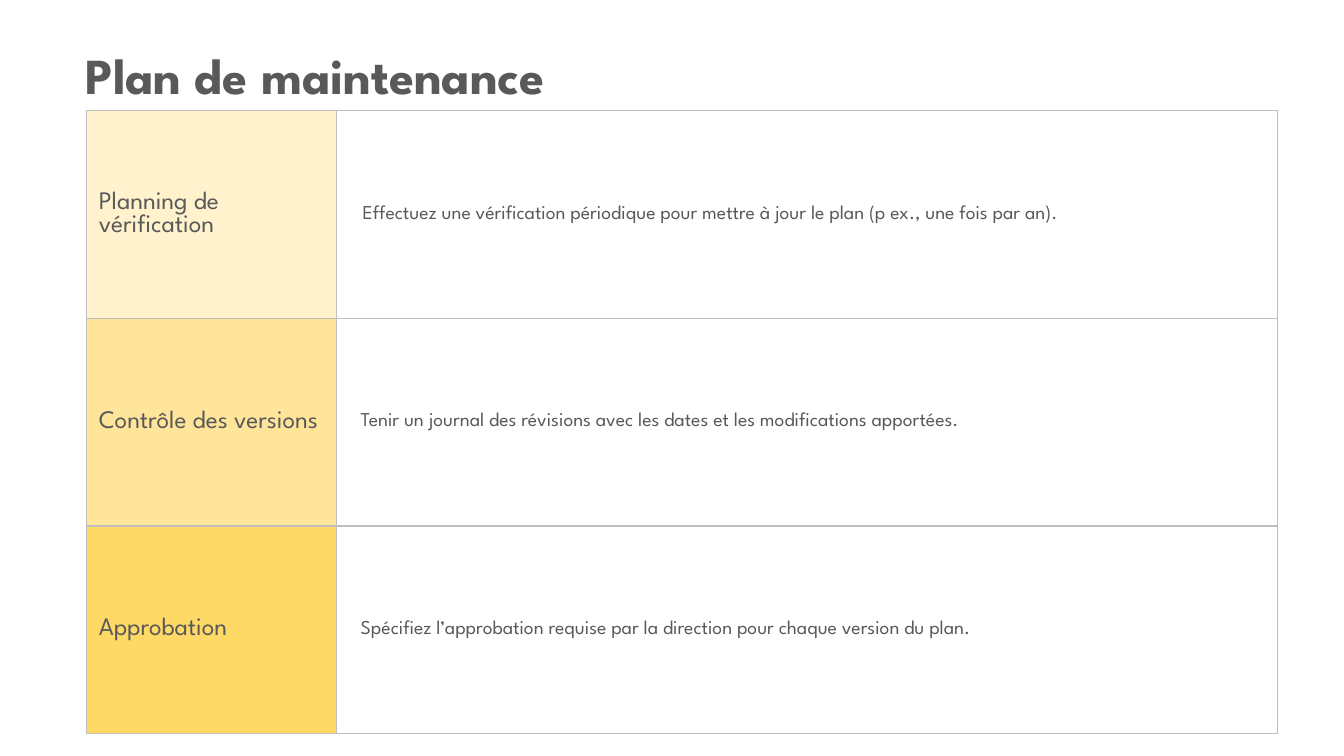
from lxml import etree
from pptx import Presentation
from pptx.dml.color import RGBColor
from pptx.enum.text import MSO_ANCHOR, MSO_AUTO_SIZE
from pptx.oxml.ns import qn
from pptx.util import Cm, Pt

MIDDLE = MSO_ANCHOR.MIDDLE
FIT_SHAPE = MSO_AUTO_SIZE.SHAPE_TO_FIT_TEXT
FONT_NAME = "League Spartan"
TEXT_GREY = RGBColor(0x59, 0x59, 0x59)
BORDER_GREY = RGBColor(0xBF, 0xBF, 0xBF)
PALE_YELLOW = RGBColor(0xFF, 0xF2, 0xCC)
LIGHT_YELLOW = RGBColor(0xFF, 0xE5, 0x99)
GOLDEN_YELLOW = RGBColor(0xFF, 0xD9, 0x66)

TITLE_BOX = Cm(1.9), Cm(0.99), Cm(27.94), Cm(1.8)
TABLE_BOX = Cm(2.18), Cm(2.79), Cm(30.02), Cm(15.7)
LABEL_WIDTH = Cm(6.3)
LABEL_INDENT = Cm(0.18)
DETAIL_INDENT = Cm(0.48)
NARROW_MARGIN = Cm(0.13)
WIDE_MARGIN = Cm(0.18)

PLAN_ROWS = [
    ("Planning de vérification", PALE_YELLOW, WIDE_MARGIN,
     "Effectuez une vérification périodique pour mettre à jour le plan (p ex., une fois par an)."),
    ("Contrôle des versions", LIGHT_YELLOW, NARROW_MARGIN,
     "Tenir un journal des révisions avec les dates et les modifications apportées."),
    ("Approbation", GOLDEN_YELLOW, NARROW_MARGIN,
     "Spécifiez l’approbation requise par la direction pour chaque version du plan."),
]


def set_attributes(target, values):
    """Set every attribute named in values on the target."""
    for name, value in values.items():
        setattr(target, name, value)


def write_text(paragraph, text, size, bold=False):
    """Add one formatted run to the paragraph."""
    run = paragraph.add_run()
    run.text = text
    set_attributes(run.font, {"name": FONT_NAME, "size": Pt(size), "bold": bold})
    run.font.color.rgb = TEXT_GREY


def add_borders(cell):
    """Draw a thin grey line on the four sides of the cell."""
    properties = cell._tc.get_or_add_tcPr()
    for side in ("lnL", "lnR", "lnT", "lnB"):
        line = etree.SubElement(properties, qn(f"a:{side}"), w=str(Pt(1)))
        fill = etree.SubElement(line, qn("a:solidFill"))
        etree.SubElement(fill, qn("a:srgbClr"), val=str(BORDER_GREY))


def fill_cell(cell, text, size, indent, margin, color=None):
    """Write and format one table cell."""
    set_attributes(cell, {
        "vertical_anchor": MIDDLE,
        "margin_left": margin,
        "margin_right": margin,
        "margin_top": 0,
        "margin_bottom": 0,
    })
    add_borders(cell)
    if color is None:
        cell.fill.background()
    else:
        cell.fill.solid()
        cell.fill.fore_color.rgb = color
    paragraph = cell.text_frame.paragraphs[0]
    paragraph._p.get_or_add_pPr().set("marL", str(indent))
    write_text(paragraph, text, size)


def add_title(slide, box, text):
    """Place the slide title in the given box."""
    text_frame = slide.shapes.add_textbox(*box).text_frame
    set_attributes(text_frame, {"word_wrap": True, "auto_size": FIT_SHAPE})
    write_text(text_frame.paragraphs[0], text, 36, bold=True)


def add_plan_table(slide, box, plan_rows):
    """Place the table of labels and details in the given box."""
    table = slide.shapes.add_table(len(plan_rows), 2, *box).table
    set_attributes(table, {"first_row": False, "horz_banding": False})
    table.columns[0].width = LABEL_WIDTH
    table.columns[1].width = box[2] - LABEL_WIDTH
    for index, (label, color, detail_margin, detail) in enumerate(plan_rows):
        fill_cell(table.cell(index, 0), label, 18, LABEL_INDENT, NARROW_MARGIN, color)
        fill_cell(table.cell(index, 1), detail, 14, DETAIL_INDENT, detail_margin)


def main():
    """Build the maintenance plan slide and save it."""
    presentation = Presentation()
    set_attributes(presentation, {"slide_width": Cm(33.87), "slide_height": Cm(19.05)})
    slide = presentation.slides.add_slide(presentation.slide_layouts[6])
    add_title(slide, TITLE_BOX, "Plan de maintenance")
    add_plan_table(slide, TABLE_BOX, PLAN_ROWS)
    presentation.save("out.pptx")


if __name__ == "__main__":
    main()
